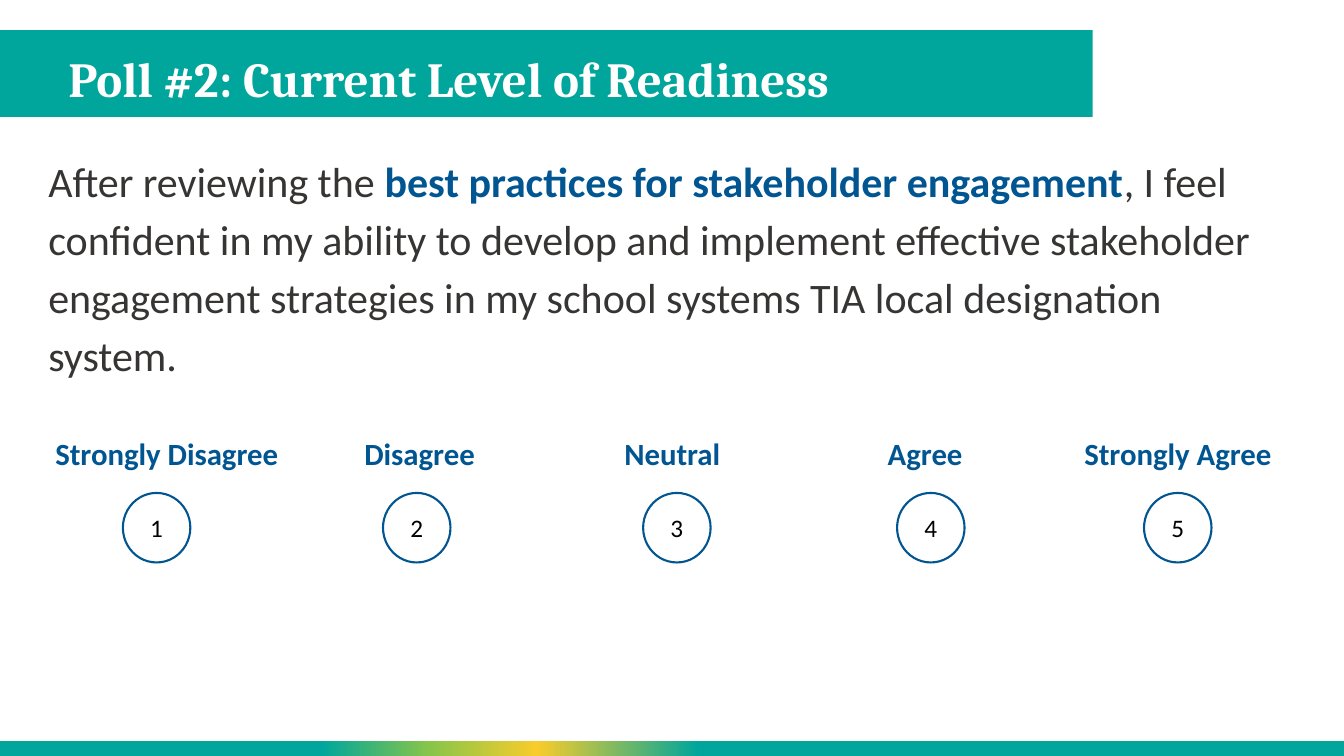
from lxml.etree import SubElement
from pptx import Presentation
from pptx.dml.color import RGBColor
from pptx.enum.shapes import MSO_SHAPE
from pptx.enum.text import MSO_ANCHOR, PP_ALIGN
from pptx.oxml.ns import qn
from pptx.util import Pt

COLORS = {
    "teal": "00A69B",
    "yellow": "F8CC2B",
    "green": "87C54A",
    "blue": "015692",
    "text": "363534",
    "white": "FFFFFF",
    "black": "000000",
}
FOOTER_STOPS = [(0, "teal"), (48, "teal"), (60, "yellow"),
                (68, "green"), (76, "teal"), (100, "teal")]
QUESTION = [
    ("After reviewing the ", "text", False),
    ("best practices for stakeholder engagement", "blue", True),
    (", I feel confident in my ability to develop and implement effective "
     "stakeholder engagement strategies in my school systems TIA local "
     "designation system.", "text", False),
]
ANSWERS = ["Strongly Disagree", "Disagree", "Neutral", "Agree", "Strongly Agree"]
CIRCLE_LEFTS = [87.8, 273.6, 459.4, 640.8, 817.2]


def color(name):
    return RGBColor.from_string(COLORS[name])


def style_font(font, size, color_name, bold=False, name="Calibri"):
    font.name = name
    font.size = Pt(size)
    font.bold = bold
    font.color.rgb = color(color_name)


def add_filled_shape(slide, kind, box, fill_name):
    """Add a flat shape without outline; box is left, top, width, height in points."""
    shape = slide.shapes.add_shape(kind, *map(Pt, box))
    shape.shadow.inherit = False
    shape.fill.solid()
    shape.fill.fore_color.rgb = color(fill_name)
    shape.line.fill.background()
    return shape


def set_gradient(shape, stops):
    """Give the shape a gradient that runs from right to left."""
    shape.fill.gradient()
    gradient = shape._element.spPr.find(qn("a:gradFill"))
    for child in list(gradient):
        gradient.remove(child)
    stop_list = SubElement(gradient, qn("a:gsLst"))
    for percent, name in stops:
        stop = SubElement(stop_list, qn("a:gs"), pos=str(percent * 1000))
        SubElement(stop, qn("a:srgbClr"), val=COLORS[name])
    SubElement(gradient, qn("a:lin"), ang="10800000", scaled="0")


def add_text(slide, box, pieces, size, line_spacing, font_name="Calibri",
             anchor=MSO_ANCHOR.TOP):
    text_frame = slide.shapes.add_textbox(*map(Pt, box)).text_frame
    text_frame.word_wrap = True
    text_frame.vertical_anchor = anchor
    paragraph = text_frame.paragraphs[0]
    paragraph.line_spacing = line_spacing
    for text, color_name, bold in pieces:
        run = paragraph.add_run()
        run.text = text
        style_font(run.font, size, color_name, bold, font_name)


def add_answer_table(slide, box, answers):
    table = slide.shapes.add_table(2, len(answers), *map(Pt, box)).table
    table.first_row = False
    table.horz_banding = False
    for row in table.rows:
        row.height = Pt(30.2)
    for cell in table.iter_cells():
        cell.fill.background()
        cell.margin_left = cell.margin_right = Pt(7.2)
        cell.margin_top = cell.margin_bottom = Pt(7.2)
    for column, answer in enumerate(answers):
        cell = table.cell(0, column)
        cell.text_frame.text = answer
        paragraph = cell.text_frame.paragraphs[0]
        paragraph.alignment = PP_ALIGN.CENTER
        style_font(paragraph.runs[0].font, 22, "blue", bold=True)


def add_number_circle(slide, left, number):
    circle = add_filled_shape(slide, MSO_SHAPE.OVAL, (left, 352.1, 48.2, 49.7), "white")
    circle.line.color.rgb = color("blue")
    circle.line.width = Pt(1.5)
    text_frame = circle.text_frame
    text_frame.margin_left = text_frame.margin_right = Pt(7.2)
    text_frame.margin_top = text_frame.margin_bottom = Pt(7.2)
    text_frame.vertical_anchor = MSO_ANCHOR.MIDDLE
    text_frame.text = str(number)
    paragraph = text_frame.paragraphs[0]
    paragraph.alignment = PP_ALIGN.CENTER
    style_font(paragraph.runs[0].font, 18, "black")


def main():
    presentation = Presentation()
    presentation.slide_width = Pt(960)
    presentation.slide_height = Pt(540)
    slide = presentation.slides.add_slide(presentation.slide_layouts[6])

    add_filled_shape(slide, MSO_SHAPE.RECTANGLE, (-0.7, 21.6, 781.2, 61.9), "teal")
    footer = add_filled_shape(slide, MSO_SHAPE.RECTANGLE, (-0.7, 529.2, 960.7, 10.8), "teal")
    set_gradient(footer, FOOTER_STOPS)

    add_text(slide, (41.8, 27.4, 761.8, 61.9),
             [("Poll #2: Current Level of Readiness", "white", True)],
             35, 0.9, "Cambria", MSO_ANCHOR.MIDDLE)
    add_text(slide, (27.4, 102.2, 882.7, 189.4), QUESTION, 30, 1.15)

    add_answer_table(slide, (28.8, 304.6, 902.9, 60.4), ANSWERS)
    for number, left in enumerate(CIRCLE_LEFTS, start=1):
        add_number_circle(slide, left, number)

    presentation.save("out.pptx")


if __name__ == "__main__":
    main()
